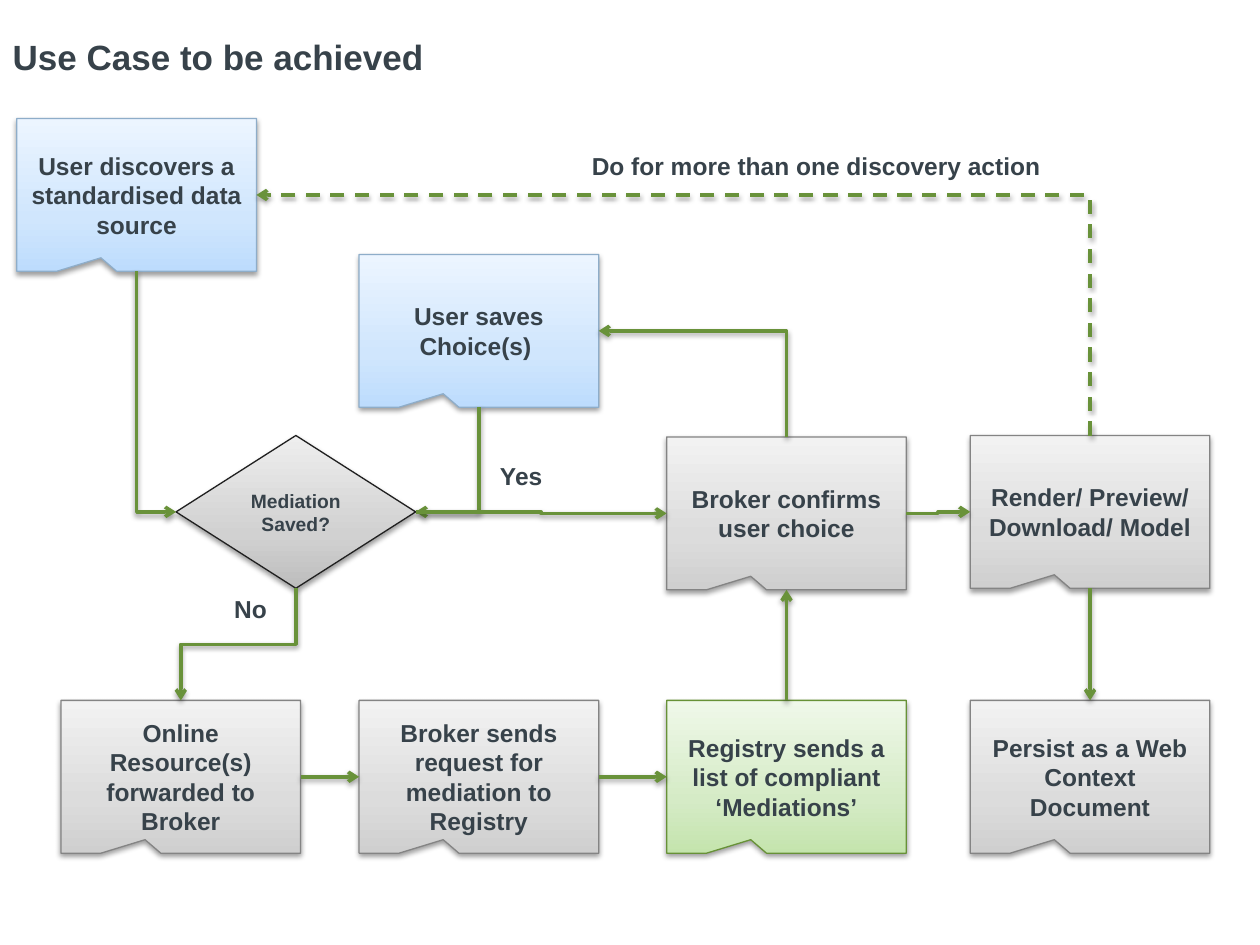
"""Build the use case flow slide, from data discovery to a saved web context."""
import copy
import pptx
import pptx.dml.color
import pptx.enum.dml
import pptx.enum.shapes
import pptx.enum.text
import pptx.oxml
import pptx.oxml.ns
import pptx.util

Cm, Pt = pptx.util.Cm, pptx.util.Pt
RGB = pptx.dml.color.RGBColor.from_string
qn = pptx.oxml.ns.qn
SHAPES = pptx.enum.shapes.MSO_SHAPE
ANCHOR = pptx.enum.text.MSO_ANCHOR
ALIGN = pptx.enum.text.PP_ALIGN
AUTO_SIZE = pptx.enum.text.MSO_AUTO_SIZE

TITLE = "Use Case to be achieved"
COLUMNS = {"start": 0.34, "online": 1.23, "decision": 3.55,
           "user": 7.24, "registry": 13.44, "output": 19.56}
ROWS = {"discover": 2.39, "save": 5.13, "decide": 8.78,
        "confirm": 8.81, "mediate": 14.12}
STEPS = {
    "discover": ("start", "discover", "user", ["User discovers a standardised data source"]),
    "forward": ("online", "mediate", "broker", ["Online Resource(s) forwarded to Broker"]),
    "request": ("user", "mediate", "broker", ["Broker sends request for mediation to Registry"]),
    "list": ("registry", "mediate", "registry", ["Registry sends a list of compliant ‘Mediations’"]),
    "confirm": ("registry", "confirm", "broker", ["Broker confirms user choice"]),
    "render": ("output", "decide", "broker", ["Render/ Preview/ Download/ Model"]),
    "persist": ("output", "mediate", "broker", ["Persist as a Web Context Document"]),
    "save": ("user", "save", "user", ["User saves", "Choice(s) "]),
    "saved?": ("decision", "decide", "decision", ["Mediation Saved?"]),
}
FLOWS = [
    ("discover", "bottom", "saved?", "left"),
    ("forward", "right", "request", "left"),
    ("request", "right", "list", "left"),
    ("list", "top", "confirm", "bottom"),
    ("confirm", "right", "render", "left"),
    ("render", "bottom", "persist", "top"),
    ("confirm", "top", "save", "right"),
    ("saved?", "bottom", "forward", "top"),
    ("save", "bottom", "saved?", "right"),
    ("saved?", "right", "confirm", "left"),
    ("render", "top", "discover", "right"),
]
REPEATED_FLOW = FLOWS[-1]
LABELS = [
    ("Do for more than one discovery action", 11.68, 2.92, 9.63),
    ("No", 4.47, 11.86, 1.17),
    ("Yes", 9.83, 9.17, 1.37),
]
STEP_WIDTH, STEP_HEIGHT, LABEL_HEIGHT = 4.83, 3.08, 0.86
NOTCH = (-0.149, 0.412)
SITES = {"top": 0, "left": 1, "bottom": 2, "right": 3}

THEME = {
    "font": "Arial", "text": "37424A", "arrow": "69923A",
    "title_size": 20, "step_size": 14, "decision_size": 11,
    "outline": 0.75, "arrow_width": 2,
    "user": (("BDDCFD", "D0E6FD", "ECF5FF"), "8EADC9"),
    "broker": (("CFCFCF", "DCDCDC", "F2F2F2"), "848484"),
    "registry": (("C4E4AD", "D5EBC6", "EFF8E9"), "679137"),
    "decision": (("BDBDBD", "D1D1D1", "EEEEEE"), "202020"),
}
STOPS = (0, 0.35, 1)
SHADOW = (
    '<a:effectLst xmlns:a="http://schemas.openxmlformats.org/drawingml/2006/main">'
    '<a:outerShdw blurRad="39370" dist="20320" dir="5400000" rotWithShape="0">'
    '<a:srgbClr val="000000"><a:alpha val="38000"/></a:srgbClr>'
    '</a:outerShdw></a:effectLst>'
)


def apply(target, values):
    for name, value in values.items():
        setattr(target, name, value)


def write(frame, paragraphs, size, align, frame_format):
    apply(frame, frame_format)
    for index, words in enumerate(paragraphs):
        paragraph = frame.paragraphs[0] if index == 0 else frame.add_paragraph()
        paragraph.alignment = align
        run = paragraph.add_run()
        run.text = words
        apply(run.font, {"name": THEME["font"], "size": Pt(size), "bold": True})
        run.font.color.rgb = RGB(THEME["text"])


def outline(line, color, width):
    line.color.rgb = RGB(color)
    line.width = Pt(width)


def cast_shadow(drawn):
    drawn._element.spPr.append(pptx.oxml.parse_xml(SHADOW))


def shade(fill, colors):
    fill.gradient()
    fill.gradient_angle = 90
    last = fill.gradient_stops[1]._gs
    last.addnext(copy.deepcopy(last))
    for stop, position, color in zip(fill.gradient_stops, STOPS, colors):
        stop.position = position
        stop.color.rgb = RGB(color)


def add_step(slide, column, row, role, paragraphs):
    decides = role == "decision"
    preset = SHAPES.FLOWCHART_DECISION if decides else SHAPES.RECTANGULAR_CALLOUT
    step = slide.shapes.add_shape(preset, Cm(COLUMNS[column]), Cm(ROWS[row]),
                                  Cm(STEP_WIDTH), Cm(STEP_HEIGHT))
    if not decides:
        for index, offset in enumerate(NOTCH):
            step.adjustments[index] = offset
    colors, edge = THEME[role]
    shade(step.fill, colors)
    outline(step.line, edge, THEME["outline"])
    cast_shadow(step)
    size = THEME["decision_size" if decides else "step_size"]
    write(step.text_frame, paragraphs, size, ALIGN.CENTER,
          {"word_wrap": True, "vertical_anchor": ANCHOR.MIDDLE})


def bend(flow, upright, single_corner):
    dx, dy = flow.end_x - flow.begin_x, flow.end_y - flow.begin_y
    center_x, center_y = flow.begin_x + dx / 2, flow.begin_y + dy / 2
    width, height = (abs(dy), abs(dx)) if upright else (abs(dx), abs(dy))
    frame = flow._element.spPr.find(qn("a:xfrm"))
    flips = (dy < 0, dx > 0) if upright else (dx < 0, dy < 0)
    for name, flipped in zip(("flipH", "flipV"), flips):
        frame.set(name, str(int(flipped)))
    frame.set("rot", "5400000" if upright else "0")
    apply(flow, {"left": int(center_x - width / 2), "top": int(center_y - height / 2),
                 "width": width, "height": height})
    if single_corner:
        flow._element.spPr.find(qn("a:prstGeom")).set("prst", "bentConnector2")


def add_flow(slide, steps, source, leaving, target, entering):
    flow = slide.shapes.add_connector(pptx.enum.shapes.MSO_CONNECTOR.ELBOW, 0, 0, 0, 0)
    flow.begin_connect(steps[source], SITES[leaving])
    flow.end_connect(steps[target], SITES[entering])
    upright = leaving in ("top", "bottom")
    bend(flow, upright, upright != (entering in ("top", "bottom")))
    outline(flow.line, THEME["arrow"], THEME["arrow_width"])
    if (source, leaving, target, entering) == REPEATED_FLOW:
        flow.line.dash_style = pptx.enum.dml.MSO_LINE.DASH
    tip = flow.line._get_or_add_ln().makeelement(qn("a:tailEnd"), {"type": "arrow"})
    flow.line._get_or_add_ln().append(tip)
    cast_shadow(flow)


def main():
    deck = pptx.Presentation()
    apply(deck, {"slide_width": Cm(25.4), "slide_height": Cm(19.05)})
    slide = deck.slides.add_slide(deck.slide_layouts[5])
    title = slide.shapes.title
    apply(title, {"left": 0, "top": Cm(0.51), "width": deck.slide_width, "height": Cm(1.8)})
    write(title.text_frame, [TITLE], THEME["title_size"], ALIGN.LEFT,
          {"vertical_anchor": ANCHOR.TOP, "margin_top": Cm(0.2),
           "auto_size": AUTO_SIZE.NONE})
    for step in STEPS.values():
        add_step(slide, *step)
    steps = dict(zip(STEPS, list(slide.shapes)[1:]))
    for flow in FLOWS:
        add_flow(slide, steps, *flow)
    for words, left, top, width in LABELS:
        label = slide.shapes.add_textbox(Cm(left), Cm(top), Cm(width), Cm(LABEL_HEIGHT))
        write(label.text_frame, [words], THEME["step_size"], ALIGN.LEFT,
              {"word_wrap": False, "auto_size": AUTO_SIZE.SHAPE_TO_FIT_TEXT})
    deck.save("out.pptx")


if __name__ == "__main__":
    main()
